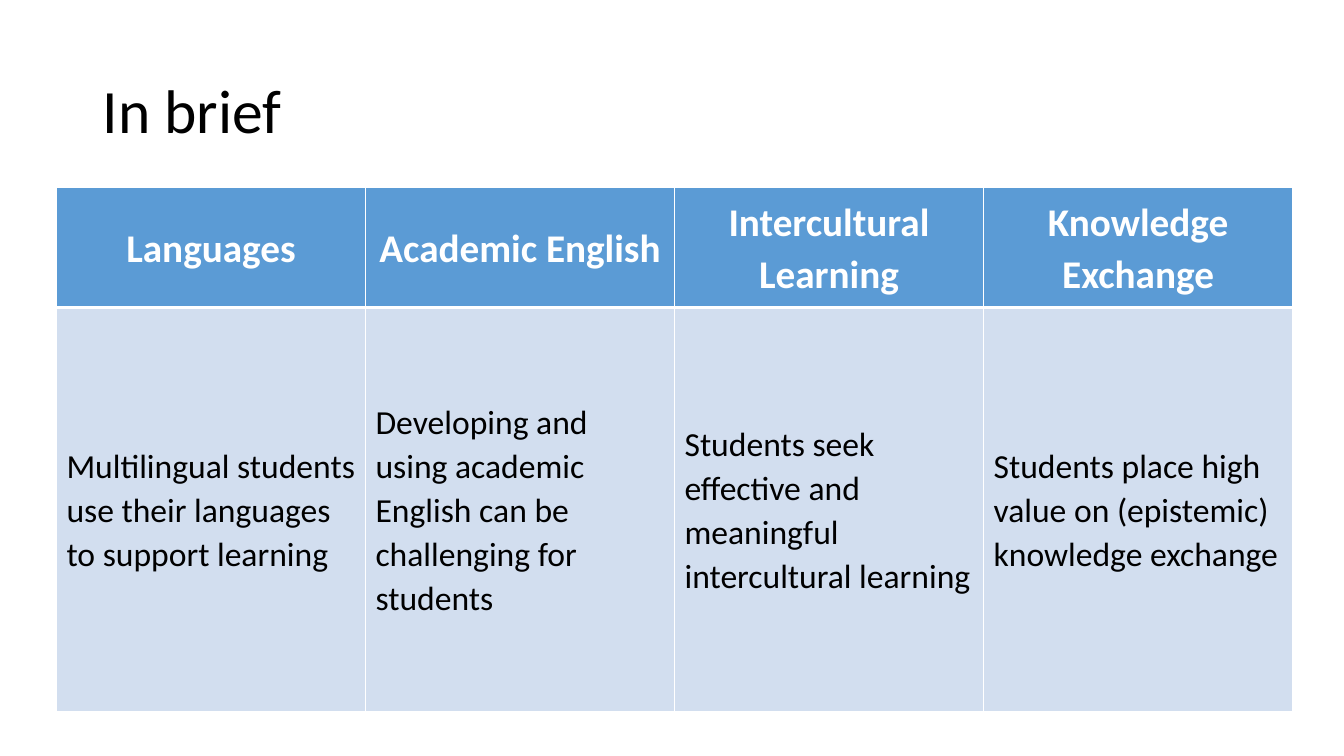
import dataclasses

import pptx
import pptx.dml.color
import pptx.enum.text
import pptx.oxml
import pptx.oxml.ns
import pptx.util

Inches = pptx.util.Inches
Align = pptx.enum.text.PP_ALIGN
MIDDLE = pptx.enum.text.MSO_ANCHOR.MIDDLE


@dataclasses.dataclass(frozen=True)
class Theme:
    font: str = "Calibri"
    dark: str = "000000"
    light: str = "FFFFFF"
    header_fill: str = "5B9BD5"
    body_fill: str = "D2DEEF"
    title_size: int = 44
    header_size: int = 28
    body_size: int = 24
    thin_border: int = 1
    thick_border: int = 3


COLUMNS = [
    ("Languages", "Multilingual students use their languages to support learning"),
    ("Academic English", "Developing and using academic English can be challenging for students"),
    ("Intercultural Learning", "Students seek effective and meaningful intercultural learning"),
    ("Knowledge Exchange", "Students place high value on (epistemic) knowledge exchange"),
]


def rgb(color):
    return pptx.dml.color.RGBColor.from_string(color)


def write_text(text_frame, text, *, font, size, color, bold=False,
               align=Align.LEFT, line_spacing=1.0):
    paragraph = text_frame.paragraphs[0]
    paragraph.alignment = align
    paragraph.line_spacing = line_spacing
    run = paragraph.add_run()
    run.text = text
    run.font.name = font
    run.font.size = pptx.util.Pt(size)
    run.font.bold = bold
    run.font.color.rgb = rgb(color)


def set_borders(cell, color, **widths):
    """Draw cell borders; widths maps L, R, T and B, in that order, to points."""
    properties = cell._tc.get_or_add_tcPr()
    for side, width in widths.items():
        properties.append(pptx.oxml.parse_xml(
            f'<a:ln{side} {pptx.oxml.ns.nsdecls("a")} w="{pptx.util.Pt(width)}">'
            f'<a:solidFill><a:srgbClr val="{color}"/></a:solidFill></a:ln{side}>'))


class SlideBuilder:
    def __init__(self, slide, theme):
        self.slide = slide
        self.theme = theme

    def title(self, text, left, top, width, height):
        theme = self.theme
        shape = self.slide.shapes.add_textbox(left, top, width, height)
        shape.text_frame.word_wrap = True
        shape.text_frame.vertical_anchor = MIDDLE
        write_text(shape.text_frame, text, font=theme.font, size=theme.title_size,
                   color=theme.dark, line_spacing=0.9)

    def table(self, columns, left, top, width, row_heights):
        theme = self.theme
        table = self.slide.shapes.add_table(
            len(row_heights), len(columns), left, top, width, sum(row_heights)).table
        for row, height in zip(table.rows, row_heights):
            row.height = height
        for index, (header, body) in enumerate(columns):
            table.columns[index].width = width // len(columns)
            self.cell(table.cell(0, index), header, theme.header_fill,
                      top=theme.thin_border, bottom=theme.thick_border,
                      size=theme.header_size, color=theme.light, bold=True,
                      align=Align.CENTER)
            self.cell(table.cell(1, index), body, theme.body_fill,
                      top=theme.thick_border, bottom=theme.thin_border,
                      size=theme.body_size, color=theme.dark)

    def cell(self, cell, text, fill, *, top, bottom, **text_format):
        theme = self.theme
        set_borders(cell, theme.light, L=theme.thin_border, R=theme.thin_border,
                    T=top, B=bottom)
        cell.fill.solid()
        cell.fill.fore_color.rgb = rgb(fill)
        cell.vertical_anchor = MIDDLE
        write_text(cell.text_frame, text, font=theme.font, line_spacing=1.07,
                   **text_format)


def main():
    presentation = pptx.Presentation()
    presentation.slide_width = Inches(13.33)
    presentation.slide_height = Inches(7.5)
    slide = presentation.slides.add_slide(presentation.slide_layouts[6])

    builder = SlideBuilder(slide, Theme())
    builder.title("In brief", Inches(0.92), Inches(0.4), Inches(11.5), Inches(1.45))
    builder.table(COLUMNS, Inches(0.56), Inches(1.86), Inches(12.26),
                  [Inches(1.19), Inches(4.01)])
    presentation.save("out.pptx")


if __name__ == "__main__":
    main()
